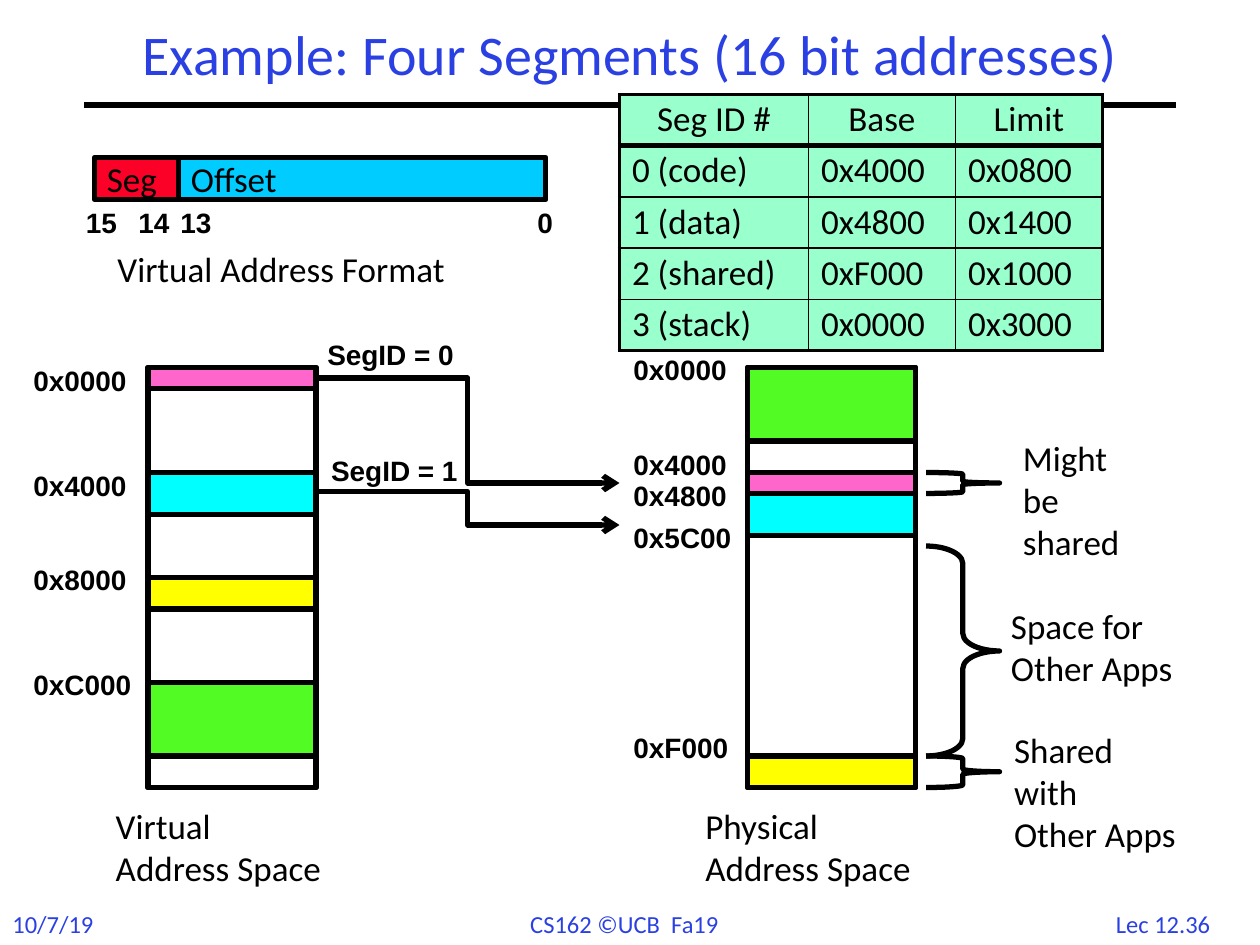
"""Builds the lecture slide on a four-segment, 16 bit address space."""
from dataclasses import dataclass
from typing import Optional

from lxml import etree
from pptx import Presentation
from pptx import util as u
from pptx.dml.color import RGBColor
from pptx.enum import shapes, text
from pptx.oxml import ns

GRID_CM = 2.54 / 12
COLORS = {
    "black": "000000", "blue": "2A40E2", "mint": "99FFCC", "sky": "00CCFF",
    "red": "FC0128", "pink": "FF66CC", "cyan": "00FFFF", "green": "53FB25",
    "yellow": "FFFF00",
}


@dataclass(frozen=True)
class Style:
    font: str
    size: int
    bold: bool = False
    color: str = "black"


BODY = Style("Calibri", 20)
MARK = Style("Arial", 16, bold=True)
FOOT = Style("Calibri", 14, color="blue")
TITLE = Style("Calibri", 32, color="blue")


@dataclass(frozen=True)
class Label:
    words: str
    left: float
    top: float
    width: float
    height: float
    style: Style = BODY
    wrap: bool = False


@dataclass(frozen=True)
class Segment:
    start: int
    end: int
    color: Optional[str] = None


@dataclass(frozen=True)
class Memory:
    left: float
    segments: tuple
    label_left: float
    addresses: dict


@dataclass(frozen=True)
class Route:
    kind: int
    start: tuple
    end: tuple
    arrow: bool = False


LABELS = (
    Label("Lec 12.36", 105.1, 86, 12.36, 4, FOOT),
    Label("10/7/19", 0, 86, 10.8, 4, FOOT),
    Label("CS162 ©UCB  Fa19", 49.32, 86, 21.48, 4, FOOT),
    Label("15", 7, 19, 5.4, 4.4, MARK),
    Label("14", 12, 19, 5.4, 4.4, MARK),
    Label("13", 16, 19, 5.4, 4.4, MARK),
    Label("0", 50, 19, 3.84, 4.4, MARK),
    Label("Virtual Address Format", 10, 23, 34, 5.2),
    Label("Virtual\nAddress Space", 9.84, 76, 22.2, 9.2),
    Label("Physical\nAddress Space", 66, 76, 22.2, 9.2),
    Label("Space for\nOther Apps", 95.1, 57, 18.5, 9.2),
    Label("Shared with\nOther Apps", 95.4, 68.8, 18, 9.2, wrap=True),
    Label("Might\nbe shared", 96.24, 41, 14.4, 9.2, wrap=True),
    Label("SegID = 0", 30, 31.6, 14.6, 4.4, MARK),
    Label("SegID = 1", 30.36, 42.6, 14.6, 4.4, MARK),
)
MEMORY_TOP = 35
MEMORY_WIDTH = 16
ADDRESS_WIDTH = 12.5
MEMORIES = (
    Memory(14.1,
           (Segment(0, 40), Segment(0, 2, "pink"), Segment(10, 14, "cyan"),
            Segment(30, 37, "green"), Segment(30, 40), Segment(20, 23, "yellow")),
           2, {"0x0000": 34, "0x4000": 44, "0x8000": 53, "0xC000": 63}),
    Memory(71.2,
           (Segment(0, 40), Segment(10, 12, "pink"), Segment(12, 16, "cyan"),
            Segment(0, 7, "green"), Segment(37, 40, "yellow")),
           59.15, {"0x0000": 33, "0x4000": 42, "0x4800": 45, "0x5C00": 49, "0xF000": 69}),
)
BRACES = ((52, 20, 0.238), (45, 2, 0.083), (72, 3, 0.083))
RULE = Route(shapes.MSO_CONNECTOR.STRAIGHT, (8, 10), (112, 10))
ARROWS = (
    Route(shapes.MSO_CONNECTOR.ELBOW, (30.1, 36), (59, 46), arrow=True),
    Route(shapes.MSO_CONNECTOR.ELBOW, (30.1, 46.8), (59, 50), arrow=True),
)
COLUMN_WIDTHS = (18, 14, 14)
ROW_HEIGHT = 4.78
SEGMENT_TABLE = (
    ("Seg ID #", "Base", "Limit"),
    ("0 (code)", "0x4000", "0x0800"),
    ("1 (data)", "0x4800", "0x1400"),
    ("2 (shared)", "0xF000", "0x1000"),
    ("3 (stack)", "0x0000", "0x3000"),
)


def grid(*units: float) -> list:
    return [u.Cm(unit * GRID_CM) for unit in units]


def rgb(name: str) -> RGBColor:
    return RGBColor.from_string(COLORS[name])


def write(frame, words: str, style: Style, align=text.PP_ALIGN.LEFT, spacing=None) -> None:
    for index, line in enumerate(words.split("\n")):
        para = frame.add_paragraph() if index else frame.paragraphs[0]
        para.alignment = align
        if spacing:
            para.line_spacing = spacing
        span = para.add_run()
        span.text = line
        span.font.name = style.font
        span.font.size = u.Pt(style.size)
        span.font.bold = style.bold
        span.font.color.rgb = rgb(style.color)


def draw_label(page, label: Label) -> None:
    box = page.shapes.add_textbox(*grid(label.left, label.top, label.width, label.height))
    box.text_frame.word_wrap = label.wrap
    write(box.text_frame, label.words, label.style)


def draw_shape(page, kind, left: float, top: float, width: float, height: float,
               color: Optional[str] = None):
    shape = page.shapes.add_shape(kind, *grid(left, top, width, height))
    shape.shadow.inherit = False
    if color:
        shape.fill.solid()
        shape.fill.fore_color.rgb = rgb(color)
    else:
        shape.fill.background()
    shape.line.color.rgb = rgb("black")
    shape.line.width = u.Pt(3)
    return shape


def draw_field(page, words: str, left: float, width: float, color: str) -> None:
    field = draw_shape(page, shapes.MSO_SHAPE.RECTANGLE, left, 15, width, 4, color)
    field.text_frame.word_wrap = False
    field.text_frame.vertical_anchor = text.MSO_ANCHOR.MIDDLE
    write(field.text_frame, words, BODY)


def draw_memory(page, memory: Memory) -> None:
    for segment in memory.segments:
        draw_shape(page, shapes.MSO_SHAPE.RECTANGLE, memory.left, MEMORY_TOP + segment.start,
                   MEMORY_WIDTH, segment.end - segment.start, segment.color)
    for address, top in memory.addresses.items():
        draw_label(page, Label(address, memory.label_left, top, ADDRESS_WIDTH, 4.4, MARK))


def draw_route(page, route: Route) -> None:
    line = page.shapes.add_connector(route.kind, *grid(*route.start, *route.end))
    line.line.color.rgb = rgb("black")
    line.line.width = u.Pt(3)
    if route.arrow:
        outline = line._element.spPr.find(ns.qn("a:ln"))
        etree.SubElement(outline, ns.qn("a:tailEnd"), type="arrow")
    etree.SubElement(line._element.spPr, ns.qn("a:effectLst"))


def set_borders(cell, widths: dict) -> None:
    properties = cell._tc.get_or_add_tcPr()
    for index, (side, points) in enumerate(widths.items()):
        border = etree.Element(ns.qn(f"a:ln{side}"), w=str(int(u.Pt(points))))
        fill = etree.SubElement(border, ns.qn("a:solidFill"))
        etree.SubElement(fill, ns.qn("a:srgbClr"), val=COLORS["black"])
        properties.insert(index, border)


def draw_table(page) -> None:
    last_row, last_column = len(SEGMENT_TABLE) - 1, len(COLUMN_WIDTHS) - 1
    frame = page.shapes.add_table(last_row + 1, last_column + 1, *grid(
        59, 9, sum(COLUMN_WIDTHS), ROW_HEIGHT * len(SEGMENT_TABLE)))
    table = frame.table
    table.first_row = table.horz_banding = False
    for column, width in zip(table.columns, grid(*COLUMN_WIDTHS)):
        column.width = width
    for r, values in enumerate(SEGMENT_TABLE):
        table.rows[r].height = grid(ROW_HEIGHT)[0]
        for c, value in enumerate(values):
            cell = table.cell(r, c)
            cell.fill.solid()
            cell.fill.fore_color.rgb = rgb("mint")
            align = text.PP_ALIGN.LEFT if r else text.PP_ALIGN.CENTER
            write(cell.text_frame, value, BODY, align, 0.9)
            set_borders(cell, {
                "L": 1 if c else 2.25,
                "R": 2.25 if c == last_column else 1,
                "T": {0: 2.25, 1: 3}.get(r, 1),
                "B": {0: 3, last_row: 2.25}.get(r, 1),
            })


def draw_title(page) -> None:
    title = page.shapes.title
    title.left, title.top, title.width, title.height = grid(0, 2, 120, 7)
    title.text_frame.vertical_anchor = text.MSO_ANCHOR.MIDDLE
    title.text_frame.auto_size = text.MSO_AUTO_SIZE.NONE
    write(title.text_frame, "Example: Four Segments (16 bit addresses)", TITLE,
          text.PP_ALIGN.CENTER, 0.9)


def main() -> None:
    deck = Presentation()
    deck.slide_width, deck.slide_height = grid(120, 90)
    page = deck.slides.add_slide(deck.slide_layouts[5])
    draw_title(page)
    draw_route(page, RULE)
    draw_table(page)
    draw_field(page, "Offset", 17, 35, "sky")
    draw_field(page, "Seg", 9, 8, "red")
    for memory in MEMORIES:
        draw_memory(page, memory)
    for top, height, curve in BRACES:
        brace = draw_shape(page, shapes.MSO_SHAPE.RIGHT_BRACE, 88.2, top, 7, height)
        brace.adjustments[0] = curve
    for arrow in ARROWS:
        draw_route(page, arrow)
    for label in LABELS:
        draw_label(page, label)
    deck.save("out.pptx")


if __name__ == "__main__":
    main()
